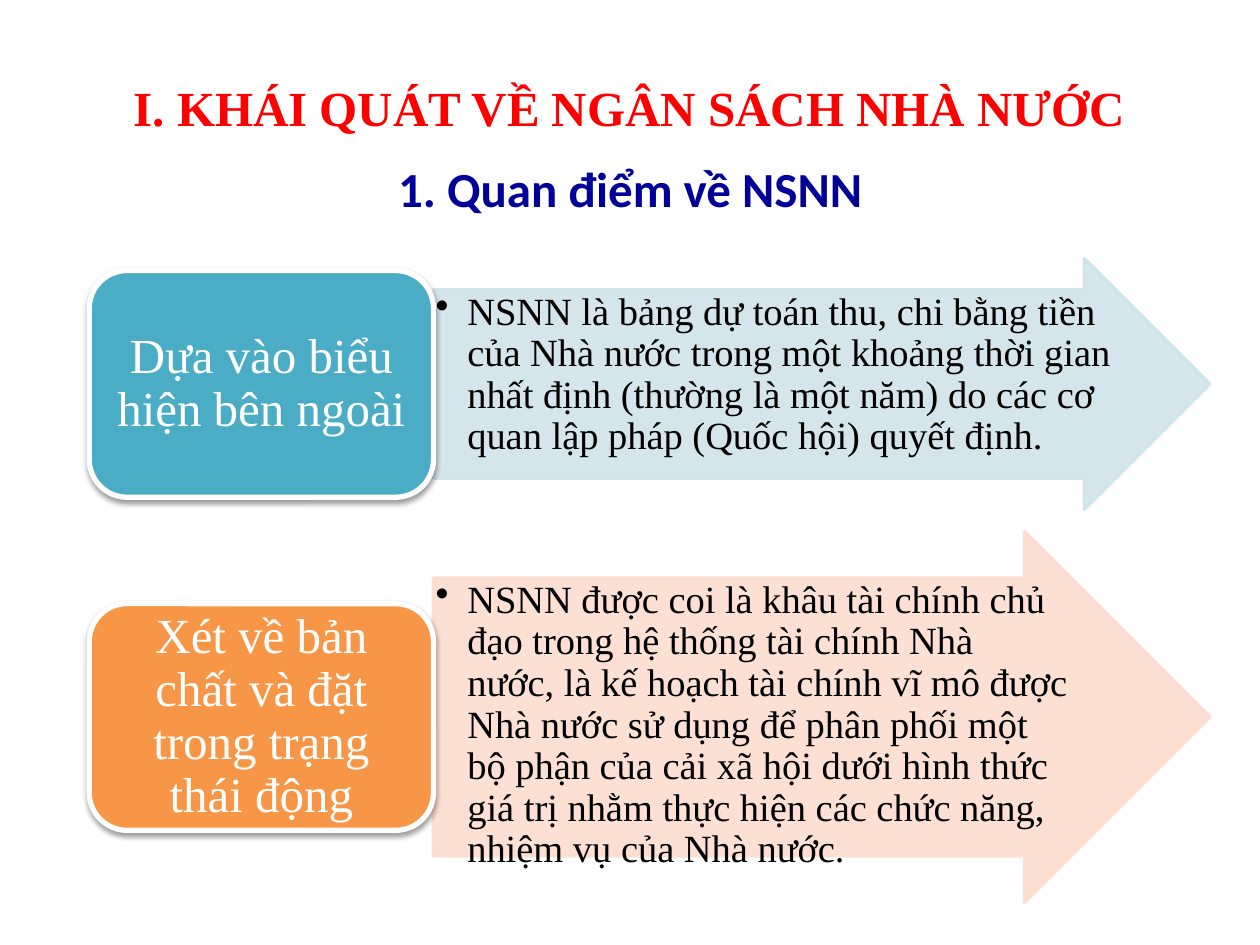
from lxml.etree import SubElement
from pptx import Presentation
from pptx.dml.color import RGBColor
from pptx.enum.shapes import MSO_SHAPE
from pptx.enum.text import MSO_ANCHOR, PP_ALIGN
from pptx.oxml.ns import qn
from pptx.util import Cm, Pt

RED = RGBColor(0xFF, 0x00, 0x00)
NAVY = RGBColor(0x00, 0x00, 0x99)
BLACK = RGBColor(0x00, 0x00, 0x00)
WHITE = RGBColor(0xFF, 0xFF, 0xFF)
TEAL = RGBColor(0x4B, 0xAC, 0xC6)
ORANGE = RGBColor(0xF7, 0x96, 0x46)
PALE_TEAL = RGBColor(0xD0, 0xE3, 0xEA)
PALE_ORANGE = RGBColor(0xFC, 0xDD, 0xCF)

SERIF = "Times New Roman"
HEADINGS = [
    ("I. KHÁI QUÁT VỀ NGÂN SÁCH NHÀ NƯỚC", (0.99, 1.17, 23.39, 1.98),
     {"name": SERIF, "size": Pt(28), "bold": True}, RED),
    ("1. Quan điểm về NSNN", (4.19, 3.07, 17.02, 1.45),
     {"name": "Calibri", "size": Pt(28), "bold": True}, NAVY),
]
ROWS = [
    {"label": "Dựa vào biểu hiện bên ngoài",
     "detail": "NSNN là bảng dự toán thu, chi bằng tiền của Nhà nước trong một "
               "khoảng thời gian nhất định (thường là một năm) do các cơ quan "
               "lập pháp (Quốc hội) quyết định.",
     "top": 5.21, "height": 5.06, "fill": TEAL, "pale": PALE_TEAL},
    {"label": "Xét về bản chất và đặt trong trạng thái động",
     "detail": "NSNN được coi là khâu tài chính chủ đạo trong hệ thống tài chính "
               "Nhà nước, là kế hoạch tài chính vĩ mô được Nhà nước sử dụng để "
               "phân phối một bộ phận của cải xã hội dưới hình thức giá trị nhằm "
               "thực hiện các chức năng, nhiệm vụ của Nhà nước.",
     "top": 10.72, "height": 7.47, "fill": ORANGE, "pale": PALE_ORANGE},
]
LABEL_FONT = {"name": SERIF, "size": Pt(28)}
DETAIL_FONT = {"name": SERIF, "size": Pt(22)}
LEFT, LABEL_W, LABEL_H = 1.8, 6.94, 4.57
ARROW_LEFT, ARROW_W = LEFT + LABEL_W, 15.65
SHAFT, HEAD = 0.75, 0.5


def write(sp, text, font, color, align, margins, anchor=MSO_ANCHOR.MIDDLE, spacing=None):
    tf = sp.text_frame
    mx, my = margins
    frame = {"word_wrap": True, "vertical_anchor": anchor,
             "margin_left": Cm(mx), "margin_right": Cm(mx),
             "margin_top": Cm(my), "margin_bottom": Cm(my)}
    for key, value in frame.items():
        setattr(tf, key, value)
    p = tf.paragraphs[0]
    p.alignment = align
    p.line_spacing = spacing
    r = p.add_run()
    r.text = text
    for key, value in font.items():
        setattr(r.font, key, value)
    r.font.color.rgb = color
    return p


def add_shape(s, kind, box, fill, line, width):
    sp = s.shapes.add_shape(kind, *map(Cm, box))
    sp.shadow.inherit = False
    sp.fill.solid()
    sp.fill.fore_color.rgb = fill
    sp.line.color.rgb = line
    sp.line.width = Pt(width)
    return sp


def add_alpha(color, percent):
    SubElement(color, qn("a:alpha"), val=str(percent * 1000))


def add_bullet(p):
    pPr = p._p.get_or_add_pPr()
    pPr.set("marL", str(Cm(0.64)))
    pPr.set("indent", str(-Cm(0.64)))
    SubElement(pPr, qn("a:buChar"), char="•")


def add_shadow(sp):
    effects = sp._element.spPr.find(qn("a:effectLst"))
    shadow = SubElement(effects, qn("a:outerShdw"), blurRad=str(Pt(3.1)),
                        dist=str(Pt(1.6)), dir="5400000", rotWithShape="0")
    add_alpha(SubElement(shadow, qn("a:srgbClr"), val=str(BLACK)), 38)


def add_row(s, row):
    top, height = row["top"], row["height"]
    arrow = add_shape(s, MSO_SHAPE.RIGHT_ARROW, (ARROW_LEFT, top, ARROW_W, height),
                      row["pale"], row["pale"], 2)
    arrow.adjustments[0], arrow.adjustments[1] = SHAFT, HEAD
    for color in list(arrow._element.spPr.iter(qn("a:srgbClr"))):
        add_alpha(color, 90)

    detail_box = (ARROW_LEFT, top + height * (1 - SHAFT) / 2,
                  ARROW_W - height * SHAFT * HEAD, height * SHAFT)
    detail = s.shapes.add_textbox(*map(Cm, detail_box))
    add_bullet(write(detail, row["detail"], DETAIL_FONT, BLACK, PP_ALIGN.LEFT,
                     (0.04, 0.04), MSO_ANCHOR.TOP, 0.9))

    label_box = (LEFT, top + (height - LABEL_H) / 2, LABEL_W, LABEL_H)
    label = add_shape(s, MSO_SHAPE.ROUNDED_RECTANGLE, label_box, row["fill"], WHITE, 3)
    add_shadow(label)
    write(label, row["label"], LABEL_FONT, WHITE, PP_ALIGN.CENTER, (0.3, 0.15), spacing=0.9)


def main():
    prs = Presentation()
    prs.slide_width, prs.slide_height = Cm(25.4), Cm(19.05)
    s = prs.slides.add_slide(prs.slide_layouts[6])
    for text, box, font, color in HEADINGS:
        heading = s.shapes.add_textbox(*map(Cm, box))
        write(heading, text, font, color, PP_ALIGN.CENTER, (0.25, 0.13))
    for row in ROWS:
        add_row(s, row)
    prs.save("out.pptx")


if __name__ == "__main__":
    main()
